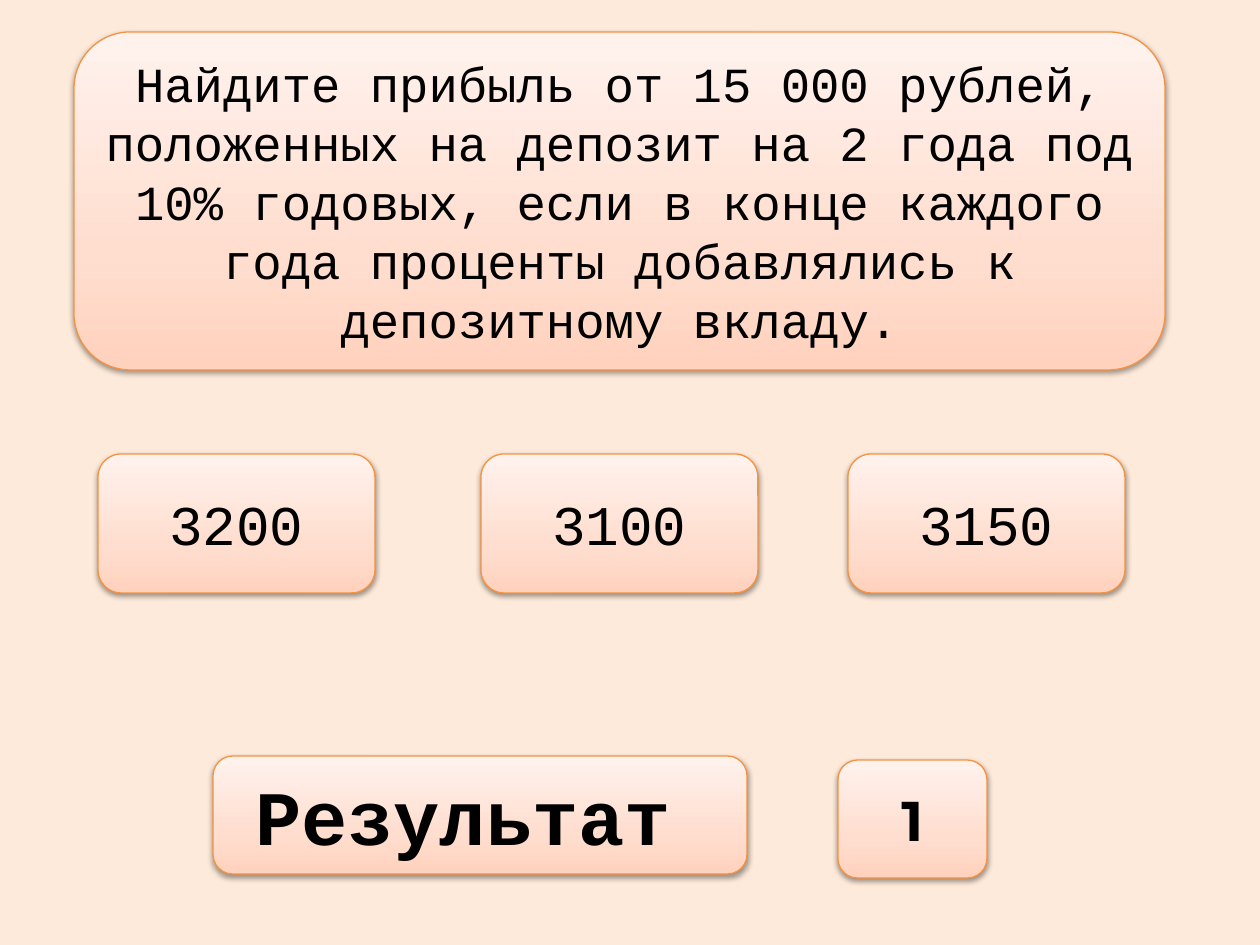
import copy
from dataclasses import dataclass

import pptx
import pptx.dml.color
import pptx.enum.shapes
import pptx.enum.text
import pptx.oxml
import pptx.oxml.ns
import pptx.slide
import pptx.util

EMU_PER_PX = 914400 / 126
COLORS = {
    "background": "FDEADA",
    "card_bottom": "FFD2BD",
    "card_middle": "FFDED0",
    "card_top": "FFF2ED",
    "outline": "F69240",
    "text": "000000",
    "shadow": "000000",
}
GRADIENT = ((0, "card_bottom"), (0.35, "card_middle"), (1, "card_top"))
ANSWER_TOP, ANSWER_WIDTH, ANSWER_HEIGHT = 454, 277, 139
RESULT_HEIGHT = 118


@dataclass(frozen=True)
class TextRun:
    text: str
    size: int
    font: str = "Courier New"
    bold: bool = False


@dataclass(frozen=True)
class Card:
    left: int
    top: int
    width: int
    height: int
    runs: tuple[TextRun, ...]


def px(length: int) -> pptx.util.Emu:
    return pptx.util.Emu(round(length * EMU_PER_PX))


def rgb(name: str) -> pptx.dml.color.RGBColor:
    return pptx.dml.color.RGBColor.from_string(COLORS[name])


def apply_gradient(fill) -> None:
    fill.gradient()
    fill.gradient_angle = 90
    stop_list = fill._fill._gradFill.gsLst
    stop_list.insert(1, copy.deepcopy(stop_list[0]))
    for stop, (position, color) in zip(fill.gradient_stops, GRADIENT):
        stop.position = position
        stop.color.rgb = rgb(color)


def apply_shadow(shape) -> None:
    shape.shadow.inherit = False
    effects = shape._element.spPr.find(pptx.oxml.ns.qn("a:effectLst"))
    effects.append(pptx.oxml.parse_xml(
        f'<a:outerShdw {pptx.oxml.ns.nsdecls("a")} blurRad="40000" dist="20000" '
        f'dir="5400000" rotWithShape="0"><a:srgbClr val="{COLORS["shadow"]}">'
        '<a:alpha val="38000"/></a:srgbClr></a:outerShdw>'
    ))


def draw_card(slide: pptx.slide.Slide, card: Card) -> None:
    shape = slide.shapes.add_shape(
        pptx.enum.shapes.MSO_SHAPE.ROUNDED_RECTANGLE,
        px(card.left), px(card.top), px(card.width), px(card.height),
    )
    apply_gradient(shape.fill)
    shape.line.color.rgb = rgb("outline")
    shape.line.width = pptx.util.Pt(0.75)
    apply_shadow(shape)

    frame = shape.text_frame
    frame.word_wrap = True
    frame.vertical_anchor = pptx.enum.text.MSO_ANCHOR.MIDDLE
    paragraph = frame.paragraphs[0]
    paragraph.alignment = pptx.enum.text.PP_ALIGN.CENTER
    for part in card.runs:
        run = paragraph.add_run()
        run.text = part.text
        run.font.name = part.font
        run.font.size = pptx.util.Pt(part.size)
        run.font.bold = part.bold
        run.font.color.rgb = rgb("text")


def main() -> None:
    presentation = pptx.Presentation()
    presentation.slide_width = px(1260)
    presentation.slide_height = px(945)
    slide = presentation.slides.add_slide(presentation.slide_layouts[6])
    slide.background.fill.solid()
    slide.background.fill.fore_color.rgb = rgb("background")

    question = Card(74, 32, 1091, 338, (TextRun(
        "Найдите прибыль от 15 000 рублей, положенных на депозит на 2 года "
        "под 10% годовых, если в конце каждого года проценты добавлялись "
        "к депозитному вкладу.", 28),))
    answers = [
        Card(left, ANSWER_TOP, ANSWER_WIDTH, ANSWER_HEIGHT, (TextRun(amount, 32),))
        for left, amount in ((98, "3200"), (848, "3150"), (481, "3100"))
    ]
    score = Card(838, 760, 149, RESULT_HEIGHT,
                 (TextRun("1", 32, "Montserrat", True),))
    result = Card(213, 756, 534, RESULT_HEIGHT,
                  (TextRun("Результат", 44, bold=True), TextRun(" ", 32)))

    for card in (question, *answers, score, result):
        draw_card(slide, card)
    presentation.save("out.pptx")


if __name__ == "__main__":
    main()
